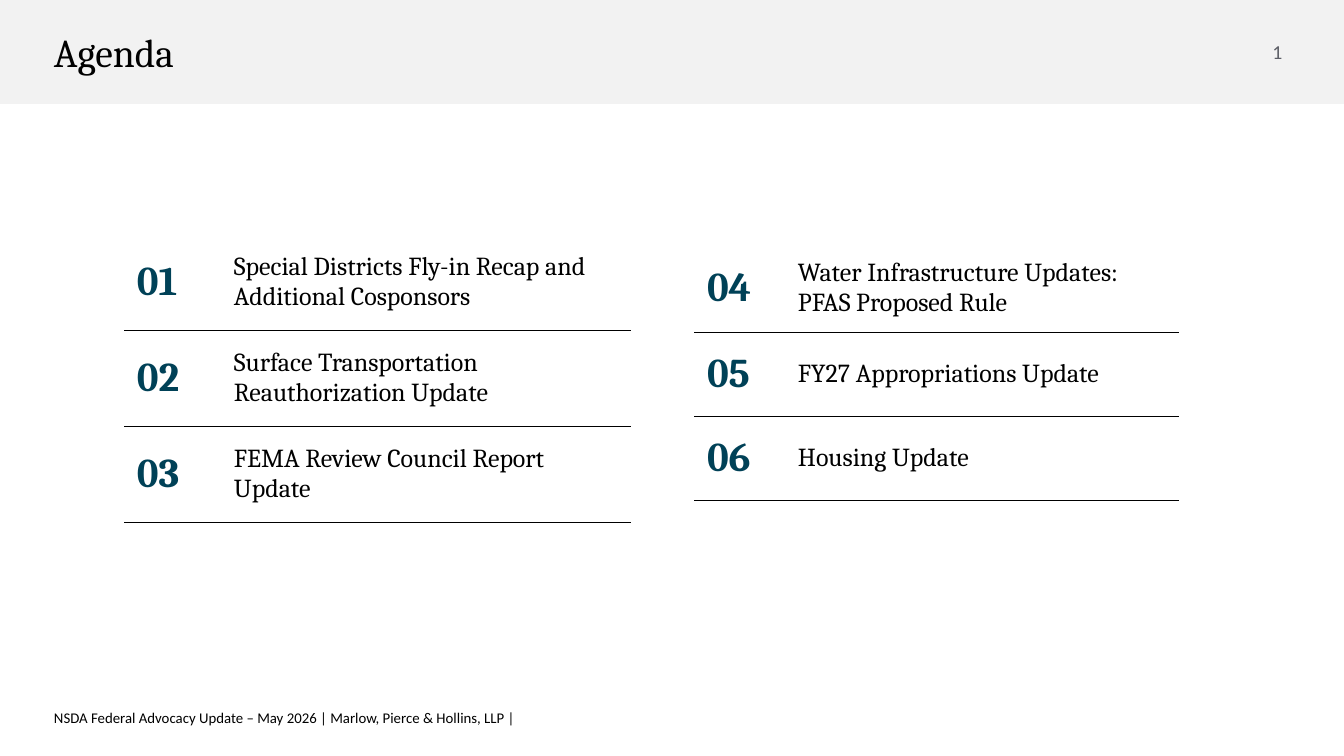
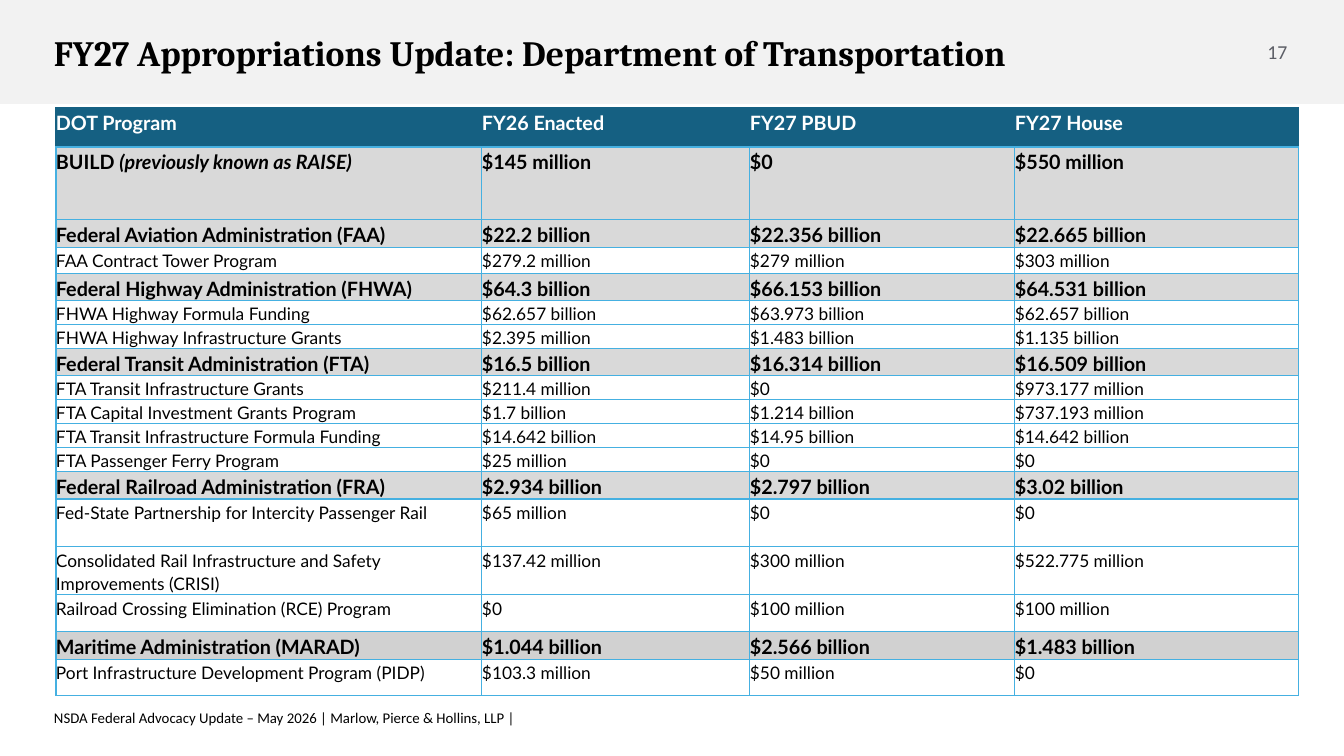
from pptx import Presentation
from pptx.dml.color import RGBColor
from pptx.enum.shapes import MSO_SHAPE
from pptx.enum.text import MSO_ANCHOR, PP_ALIGN
from pptx.oxml import parse_xml
from pptx.oxml.ns import nsdecls, qn
from pptx.util import Emu, Pt

PX = 10280  # EMU per px
SLIDE_W, SLIDE_H = 1344, 756
COLORS = {"band": "F2F2F2", "ink": "000000", "white": "FFFFFF", "page": "5C5E66",
          "number": "004157", "header": "156082", "section": "D9D9D9",
          "section_dark": "D1D1D1", "grid": "45B0E1"}
NO_STYLE = "{2D5ABB26-0587-4C30-8999-92F81FD0307C}"

# Content
FOOTER = "NSDA Federal Advocacy Update – May 2026 | Marlow, Pierce & Hollins, LLP |"
AGENDA = [
    {"at": (124, 234), "cols": (97, 410), "row": 96, "items": [
        ("01", "Special Districts Fly-in Recap and Additional Cosponsors"),
        ("02", "Surface Transportation Reauthorization Update"),
        ("03", "FEMA Review Council Report Update")]},
    {"at": (694, 244), "cols": (91, 394), "row": 84, "items": [
        ("04", "Water Infrastructure Updates: PFAS Proposed Rule"),
        ("05", "FY27 Appropriations Update"),
        ("06", "Housing Update")]},
]
FUNDING_AT, FUNDING_COLS = (56, 108), (426, 268, 265, 284)
# kind, row height, cells
FUNDING = [
    ("header", 39, ("DOT Program", "FY26 Enacted", "FY27 PBUD", "FY27 House")),
    ("section", 73, (("BUILD ", "(previously known as RAISE)"),
                     "$145 million", "$0", "$550 million")),
    ("section", 27, ("Federal Aviation Administration (FAA)",
                     "$22.2 billion", "$22.356 billion", "$22.665 billion")),
    ("program", 26, ("FAA Contract Tower Program",
                     "$279.2 million", "$279 million", "$303 million")),
    ("section", 27, ("Federal Highway Administration (FHWA)",
                     "$64.3 billion", "$66.153 billion", "$64.531 billion")),
    ("program", 24, ("FHWA Highway Formula Funding",
                     "$62.657 billion", "$63.973 billion", "$62.657 billion")),
    ("program", 24, ("FHWA Highway Infrastructure Grants",
                     "$2.395 million", "$1.483 billion", "$1.135 billion")),
    ("section", 27, ("Federal Transit Administration (FTA)",
                     "$16.5 billion", "$16.314 billion", "$16.509 billion")),
    ("program", 24, ("FTA Transit Infrastructure Grants",
                     "$211.4 million", "$0", "$973.177 million")),
    ("program", 24, ("FTA Capital Investment Grants Program",
                     "$1.7 billion", "$1.214 billion", "$737.193 million")),
    ("program", 24, ("FTA Transit Infrastructure Formula Funding",
                     "$14.642 billion", "$14.95 billion", "$14.642 billion")),
    ("program", 24, ("FTA Passenger Ferry Program", "$25 million", "$0", "$0")),
    ("section", 27, ("Federal Railroad Administration (FRA)",
                     "$2.934 billion", "$2.797 billion", "$3.02 billion")),
    ("program", 48, ("Fed-State Partnership for Intercity Passenger Rail",
                     "$65 million", "$0", "$0")),
    ("program", 48, ("Consolidated Rail Infrastructure and Safety Improvements (CRISI)",
                     "$137.42 million", "$300 million", "$522.775 million")),
    ("program", 37, ("Railroad Crossing Elimination (RCE) Program",
                     "$0", "$100 million", "$100 million")),
    ("section_dark", 27, ("Maritime Administration (MARAD)",
                          "$1.044 billion", "$2.566 billion", "$1.483 billion")),
    ("program", 36, ("Port Infrastructure Development Program (PIDP)",
                     "$103.3 million", "$50 million", "$0")),
]

# Formats
TITLE = {"name": "Cambria", "size": 32, "color": "ink"}
PAGE = {"name": "Calibri", "size": 16, "color": "page"}
FOOT = {"name": "Calibri", "size": 12, "color": "ink"}
NUMBER = {"name": "Cambria", "size": 33, "color": "number", "bold": True}
TOPIC = {"name": "Cambria", "size": 21, "color": "ink", "bold": False}
SECTION = {"name": "Lato", "size": 16, "color": "ink", "bold": True}
ROWS = {  # kind: text format, fill, border
    "header": (SECTION | {"color": "white"}, "header", "header"),
    "section": (SECTION, "section", "grid"),
    "section_dark": (SECTION, "section_dark", "grid"),
    "program": (SECTION | {"size": 14, "bold": False}, "white", "grid"),
}


def px(*values):
    return [Emu(v * PX) for v in values]


def rgb(name):
    return RGBColor.from_string(COLORS[name])


def add_run(p, text, fmt):
    r = p.add_run()
    r.text = text
    for key, value in fmt.items():
        if key == "color":
            r.font.color.rgb = rgb(value)
        else:
            setattr(r.font, key, Pt(value) if key == "size" else value)


def set_margins(obj, *margins):
    for side, value in zip(("left", "top", "right", "bottom"), px(*margins)):
        setattr(obj, "margin_" + side, value)


def add_text(s, box, text, fmt, margins=(0, 0, 0, 0), wrap=True):
    tf = s.shapes.add_textbox(*px(*box)).text_frame
    tf.word_wrap, tf.vertical_anchor = wrap, MSO_ANCHOR.MIDDLE
    set_margins(tf, *margins)
    p = tf.paragraphs[0]
    add_run(p, text, fmt)
    return p


def add_frame(prs, title, page, **title_fmt):
    """New slide with the band, title, page number and footer."""
    s = prs.slides.add_slide(prs.slide_layouts[6])
    band = s.shapes.add_shape(MSO_SHAPE.RECTANGLE, *px(0, 0, SLIDE_W, 104))
    band.shadow.inherit = False
    band.fill.solid()
    band.fill.fore_color.rgb = rgb("band")
    band.line.fill.background()
    add_text(s, (1255, 23, 45, 58), page, PAGE, wrap=False).alignment = PP_ALIGN.CENTER
    add_text(s, (44, 23, 1202, 58), title, TITLE | title_fmt, (10, 5, 10, 5))
    add_text(s, (44, 708, 1124, 22), FOOTER, FOOT, (10, 0, 0, 0)).line_spacing = 0.8
    return s


def add_grid(s, at, cols, rows):
    """Plain table without a style."""
    shape = s.shapes.add_table(len(rows), len(cols), *px(*at, sum(cols), sum(rows)))
    table = shape.table
    table.first_row = table.horz_banding = False
    table._tbl.tblPr.find(qn("a:tableStyleId")).text = NO_STYLE
    for col, width in zip(table.columns, px(*cols)):
        col.width = width
    for row, height in zip(table.rows, px(*rows)):
        row.height = height
    return table


def set_borders(cell, color, points, sides="LRTB"):
    tcPr = cell._tc.get_or_add_tcPr()
    for side in sides:
        tcPr.append(parse_xml(
            f'<a:ln{side} {nsdecls("a")} w="{Pt(points)}"><a:solidFill>'
            f'<a:srgbClr val="{COLORS[color]}"/></a:solidFill></a:ln{side}>'))


def add_agenda(s, at, cols, row, items):
    table = add_grid(s, at, cols, [row] * len(items))
    for i, item in enumerate(items):
        for j, (text, fmt) in enumerate(zip(item, (NUMBER, TOPIC))):
            cell = table.cell(i, j)
            cell.vertical_anchor = MSO_ANCHOR.MIDDLE
            set_margins(cell, 13, 13, 13, 13)
            set_borders(cell, "ink", 0.5, "B")
            cell.fill.background()
            add_run(cell.text_frame.paragraphs[0], text, fmt)


def add_funding(s):
    table = add_grid(s, FUNDING_AT, FUNDING_COLS, [height for _, height, _ in FUNDING])
    for i, (kind, _, texts) in enumerate(FUNDING):
        fmt, fill, border = ROWS[kind]
        for j, text in enumerate(texts):
            cell = table.cell(i, j)
            set_margins(cell, 0, 0, 0, 0)
            set_borders(cell, border, 1)
            cell.fill.solid()
            cell.fill.fore_color.rgb = rgb(fill)
            p = cell.text_frame.paragraphs[0]
            p.line_spacing = 1.15
            # A second part of a label is italic
            parts = (text,) if isinstance(text, str) else text
            for n, part in enumerate(parts):
                add_run(p, part, fmt | {"italic": n > 0})


def main():
    prs = Presentation()
    prs.slide_width, prs.slide_height = px(SLIDE_W, SLIDE_H)

    # Agenda
    s = add_frame(prs, "Agenda", "1")
    for block in AGENDA:
        add_agenda(s, **block)

    # Transportation funding
    s = add_frame(prs, "FY27 Appropriations Update: Department of Transportation", "17",
                  size=28.8, bold=True)
    add_funding(s)

    prs.save("out.pptx")


if __name__ == "__main__":
    main()
